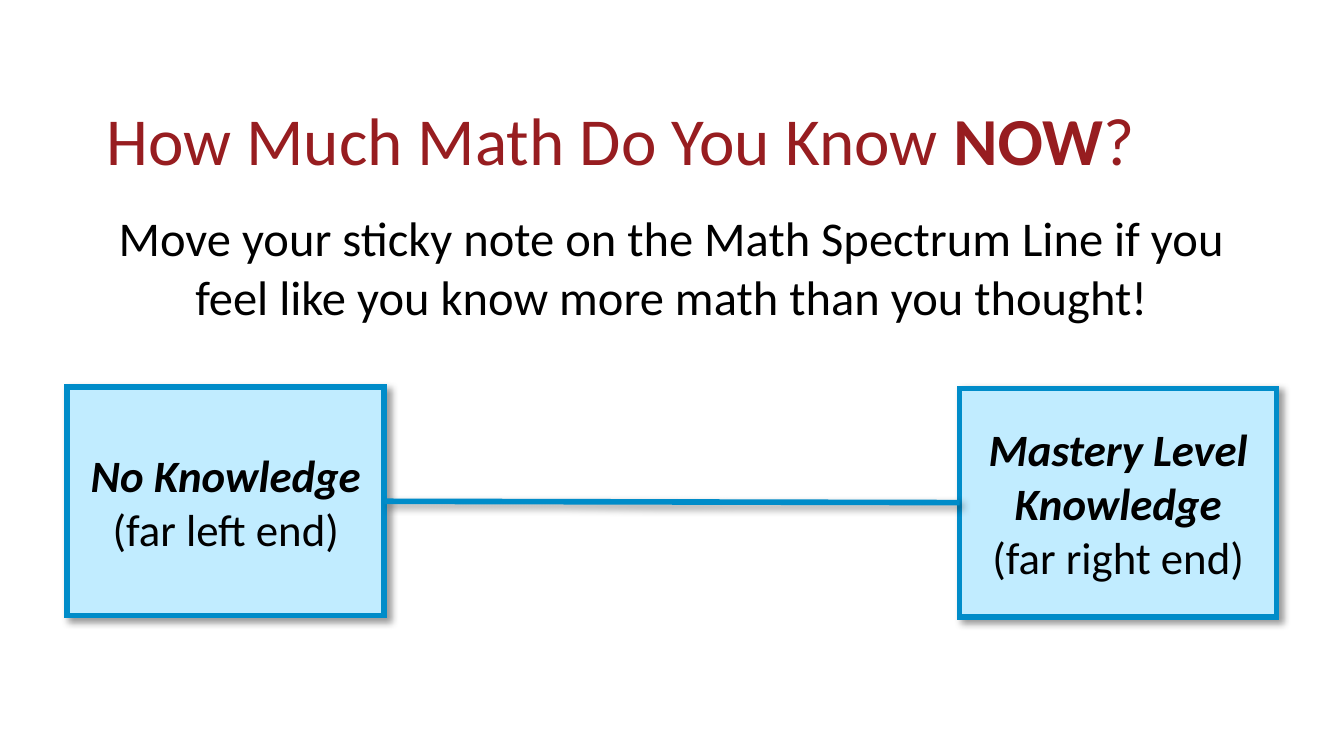
"""Build the math spectrum slide: a prompt above a line joining two end boxes."""
from lxml import etree
from pptx import Presentation
from pptx.dml.color import RGBColor
from pptx.enum.shapes import MSO_CONNECTOR, MSO_SHAPE
from pptx.enum.text import MSO_ANCHOR, MSO_AUTO_SIZE, PP_ALIGN
from pptx.oxml import parse_xml
from pptx.oxml.ns import nsdecls, qn
from pptx.util import Inches, Pt

RECTANGLE = MSO_SHAPE.RECTANGLE
STRAIGHT = MSO_CONNECTOR.STRAIGHT
TOP, MIDDLE, BOTTOM = MSO_ANCHOR.TOP, MSO_ANCHOR.MIDDLE, MSO_ANCHOR.BOTTOM
NO_FIT = MSO_AUTO_SIZE.NONE
LEFT, CENTER = PP_ALIGN.LEFT, PP_ALIGN.CENTER
COLORS = {"title": "971D20", "text": "000000", "box": "C1ECFF", "edge": "008CC9"}


def add_run(paragraph, words, size, color, bold=False, italic=False):
    run = paragraph.add_run()
    run.text = words
    run.font.name = "Calibri"
    run.font.size = Pt(size)
    run.font.bold = bold
    run.font.italic = italic
    run.font.color.rgb = RGBColor.from_string(COLORS[color])


def style_edge(part):
    part.line.color.rgb = RGBColor.from_string(COLORS["edge"])
    part.line.width = Pt(3)
    properties = part._element.spPr
    etree.SubElement(properties.find(qn("a:ln")), qn("a:miter"), lim="800000")
    properties.append(parse_xml(
        f'<a:effectLst {nsdecls("a")}>'
        f'<a:outerShdw blurRad="{Pt(4)}" dist="{Pt(3)}" dir="2700000" rotWithShape="0">'
        '<a:srgbClr val="000000"><a:alpha val="40000"/></a:srgbClr>'
        '</a:outerShdw></a:effectLst>'))


deck = Presentation()
deck.slide_width = Inches(10)
deck.slide_height = deck.slide_width * 9 // 16
width = deck.slide_width
slide = deck.slides.add_slide(deck.slide_layouts[1])

heading, prompt = slide.shapes.title, slide.placeholders[1]
for holder, top, tall, anchor, align, spacing in (
    (heading, Inches(0.3), Inches(1.09), BOTTOM, LEFT, 0.9),
    (prompt, Inches(1.5), Inches(3.57), TOP, CENTER, 1.0),
):
    holder.left, holder.top = Inches(0.69), top
    holder.width, holder.height = width - 2 * Inches(0.69), tall
    frame = holder.text_frame
    frame.word_wrap = True
    frame.auto_size = NO_FIT
    frame.vertical_anchor = anchor
    paragraph = frame.paragraphs[0]
    properties = paragraph._p.get_or_add_pPr()
    properties.set("marL", "0")
    properties.set("indent", "0")
    etree.SubElement(properties, qn("a:buNone"))
    paragraph.alignment = align
    paragraph.line_spacing = spacing
    paragraph.space_before = Pt(0)

question = heading.text_frame.paragraphs[0]
for words, bold in (("How Much Math Do You Know ", False), ("NOW", True), ("?", False)):
    add_run(question, words, 36, "title", bold)
add_run(
    prompt.text_frame.paragraphs[0],
    "Move your sticky note on the Math Spectrum Line if you feel like you know "
    "more math than you thought!",
    26, "text")

margin = int(width * 0.05)
box_width, box_height = Inches(2.36), Inches(1.7)
ends = []
for level, place, left, top in (
    ("No Knowledge", "(far left end)", margin, Inches(2.88)),
    ("Mastery Level Knowledge", "(far right end)", width - margin - box_width, Inches(2.89)),
):
    end = slide.shapes.add_shape(RECTANGLE, left, top, box_width, box_height)
    end.fill.solid()
    end.fill.fore_color.rgb = RGBColor.from_string(COLORS["box"])
    style_edge(end)
    end.text_frame.word_wrap = True
    end.text_frame.vertical_anchor = MIDDLE
    label = end.text_frame.paragraphs[0]
    label.alignment = CENTER
    add_run(label, level, 24, "text", bold=True, italic=True)
    label.add_line_break()
    add_run(label, place, 24, "text")
    ends.append(end)

spectrum = slide.shapes.add_connector(STRAIGHT, 0, 0, 0, 0)
spectrum.begin_connect(ends[0], 3)
spectrum.end_connect(ends[1], 1)
style_edge(spectrum)

deck.save("out.pptx")
